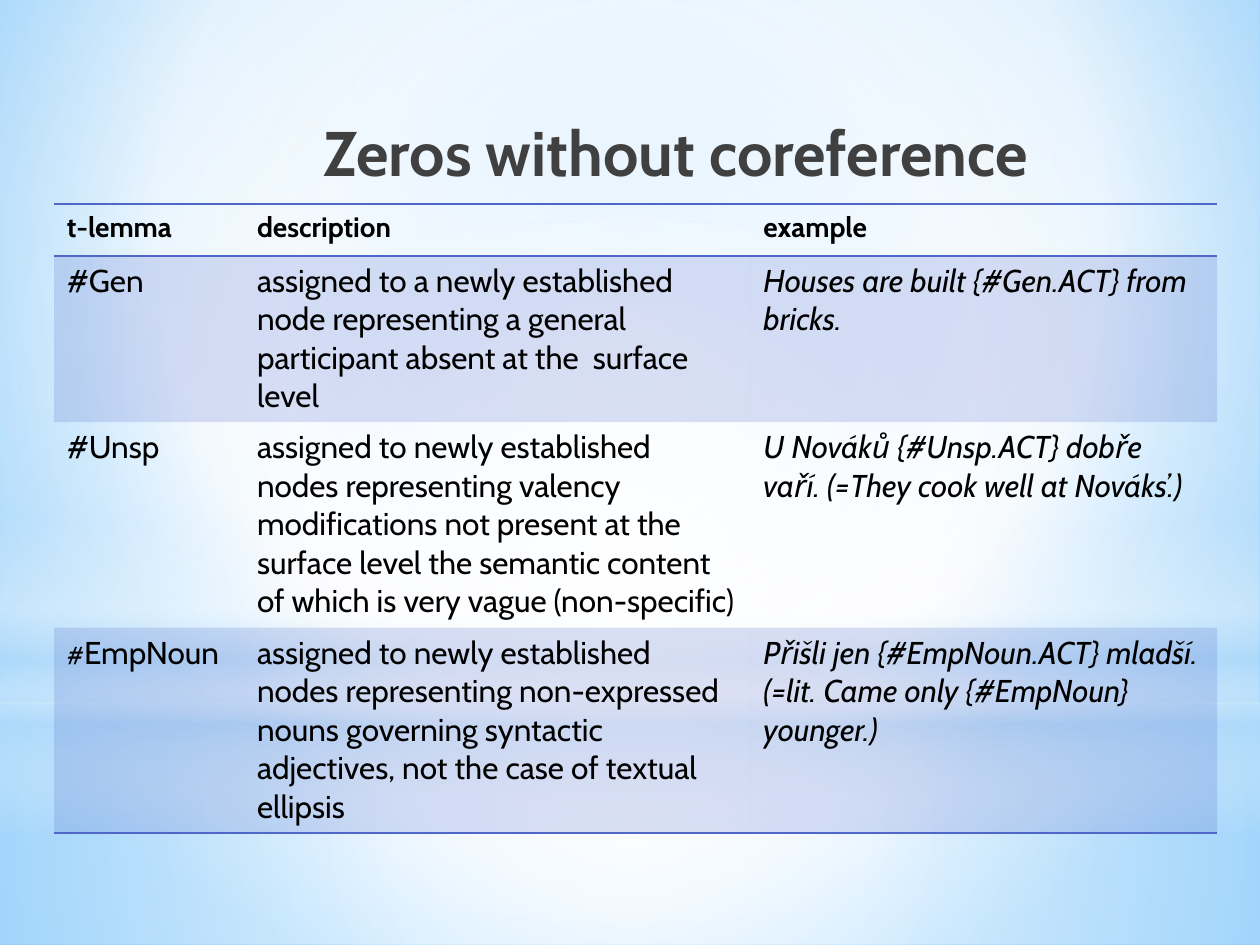
"""Build the slide 'Zeros without coreference' with its table of t-lemmas."""
from lxml.etree import SubElement
from pptx import Presentation
from pptx.dml.color import RGBColor
from pptx.enum.shapes import MSO_SHAPE as Preset
from pptx.enum.text import MSO_ANCHOR as Anchor, PP_ALIGN as Align
from pptx.oxml import parse_xml
from pptx.oxml.ns import nsdecls, qn
from pptx.util import Inches, Pt

COLORS = {"white": "FFFFFF", "sky": "9ED5FF", "azure": "5BB9FF", "pale": "B4DCFA",
          "title": "404040", "text": "000000", "accent": "4E67C8"}
FONT = "Cabin"
NO_GRID_STYLE = "{2D5ABB26-0587-4C30-8999-92F81FD0307C}"
CENTER = (50, 50, 50, 50)


def paint_gradient(element, stops, focus):
    """Replace the first solid fill by a gradient, circular around focus or vertical if None."""
    stop_xml = "".join(
        f'<a:gs pos="{place * 1000}"><a:srgbClr val="{COLORS[color]}">'
        f'<a:alpha val="{opacity * 1000}"/></a:srgbClr></a:gs>' for place, color, opacity in stops)
    if focus:
        left, top, right, bottom = (side * 1000 for side in focus)
        direction = (f'<a:path path="circle"><a:fillToRect l="{left}" t="{top}" '
                     f'r="{right}" b="{bottom}"/></a:path>')
    else:
        direction = '<a:lin ang="5400000" scaled="0"/>'
    solid = next(element.iter(qn("a:solidFill")))
    solid.getparent().replace(solid, parse_xml(
        f'<a:gradFill {nsdecls("a")} rotWithShape="1"><a:gsLst>{stop_xml}</a:gsLst>{direction}</a:gradFill>'))


def write_run(paragraph, text, color, **formats):
    """Add a run with the slide's font and the given font attributes."""
    run = paragraph.add_run()
    run.text = text
    run.font.color.rgb = RGBColor.from_string(COLORS[color])
    for name, value in {"name": FONT, **formats}.items():
        setattr(run.font, name, value)


presentation = Presentation()
presentation.slide_width, presentation.slide_height = Inches(10), Inches(7.5)
slide = presentation.slides.add_slide(presentation.slide_layouts[5])

slide.background.fill.solid()
slide.background.fill.fore_color.rgb = RGBColor.from_string(COLORS["sky"])
paint_gradient(slide.element, [(0, "sky", 100), (60, "white", 100), (100, "azure", 100)], (20, 10, 20, 60))

HORIZON = 5.58
glows = [
    (Preset.RECTANGLE, HORIZON, 7.5 - HORIZON, CENTER,
     [(0, "white", 91), (37, "white", 76), (100, "pale", 79)]),
    (Preset.RECTANGLE, 0, HORIZON, CENTER,
     [(0, "white", 89), (48, "white", 62), (100, "pale", 79)]),
    (Preset.RECTANGLE, 4.12, 2.5, None,
     [(0, "white", 0), (29, "white", 30), (45, "pale", 40), (55, "white", 26),
      (65, "pale", 60), (100, "white", 0)]),
    (Preset.OVAL, 1.75, HORIZON, CENTER, [(0, "white", 100), (56, "white", 0)]),
]
for preset, top, height, focus, stops in glows:
    shape = slide.shapes.add_shape(preset, 0, Inches(top), presentation.slide_width, Inches(height))
    shape.shadow.inherit = False
    shape.line.fill.background()
    shape.fill.solid()
    shape.fill.fore_color.rgb = RGBColor.from_string(COLORS["white"])
    paint_gradient(shape.element, stops, focus)

title = slide.shapes.title
title.element.getparent().append(title.element)
for name, value in {"left": 1.14, "top": 0.85, "width": 7.12, "height": 1.25}.items():
    setattr(title, name, Inches(value))
title.text_frame.vertical_anchor = Anchor.TOP
title_paragraph = title.text_frame.paragraphs[0]
title_paragraph.alignment = Align.RIGHT
write_run(title_paragraph, "Zeros without coreference", "title", size=Pt(36), bold=True)

rows = [
    ("t-lemma", "description", "example"),
    ("#Gen",
     "assigned to a newly established node representing a general participant absent at the  surface level",
     "Houses are built {#Gen.ACT} from bricks."),
    ("#Unsp",
     "assigned to newly established nodes representing valency modifications not present at the "
     "surface level the semantic content of which is very vague (non-specific)",
     "U Nováků {#Unsp.ACT} dobře vaří. (=They cook well at Nováks’.)"),
    ("#EmpNoun",
     "assigned to newly established nodes representing non-expressed nouns governing syntactic "
     "adjectives, not the case of textual ellipsis",
     "Přišli jen {#EmpNoun.ACT} mladší. (=lit. Came only {#EmpNoun} younger.)"),
]
column_widths = [1.51, 4.02, 3.7]
row_heights = [0.41, 1.32, 1.63, 1.63]
ruled_sides = {0: ("lnT", "lnB"), len(rows) - 1: ("lnB",)}

frame = slide.shapes.add_table(len(rows), len(column_widths), Inches(0.43), Inches(1.62),
                               Inches(sum(column_widths)), Inches(sum(row_heights)))
table = frame.table
next(frame.element.iter(qn("a:tableStyleId"))).text = NO_GRID_STYLE
for column, width in zip(table.columns, column_widths):
    column.width = Inches(width)

for row_index, (texts, height) in enumerate(zip(rows, row_heights)):
    table.rows[row_index].height = Inches(height)
    for column_index, text in enumerate(texts):
        cell = table.cell(row_index, column_index)
        paragraph = cell.text_frame.paragraphs[0]
        header = row_index == 0
        formats = {"size": Pt(16 if header else 18), "bold": header,
                   "italic": column_index == 2 and not header}
        if text == "#EmpNoun":
            write_run(paragraph, text[0], "text", **{**formats, "size": Pt(14)})
            text = text[1:]
        write_run(paragraph, text, "text", **formats)

        properties = cell._tc.get_or_add_tcPr()
        if row_index % 2:
            cell.fill.solid()
            cell.fill.fore_color.rgb = RGBColor.from_string(COLORS["accent"])
            SubElement(next(properties.iter(qn("a:srgbClr"))), qn("a:alpha"), val="20000")
        else:
            cell.fill.background()
        for position, side in enumerate(ruled_sides.get(row_index, ())):
            properties.insert(position, parse_xml(
                f'<a:{side} {nsdecls("a")} w="12700"><a:solidFill>'
                f'<a:srgbClr val="{COLORS["accent"]}"/></a:solidFill></a:{side}>'))

presentation.save("out.pptx")
